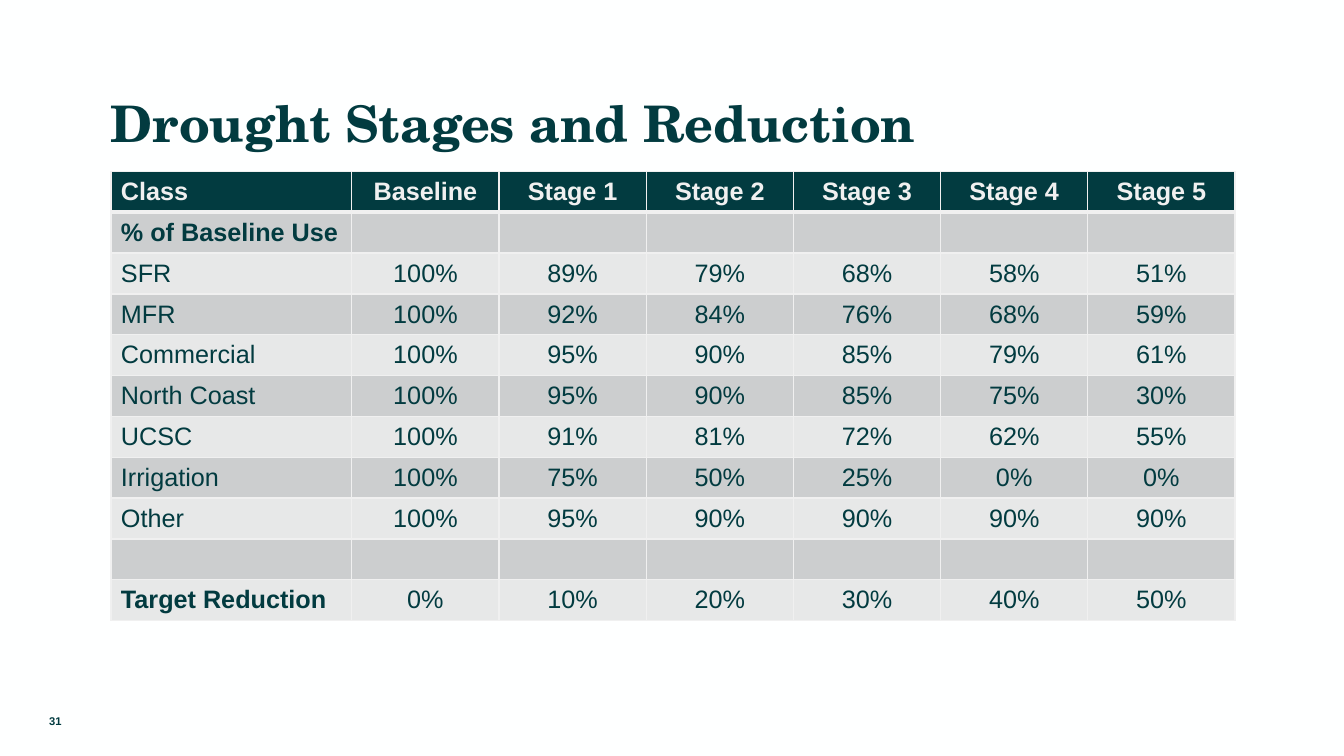
from lxml import etree
from pptx import Presentation
from pptx.dml.color import RGBColor
from pptx.enum.text import MSO_ANCHOR, MSO_AUTO_SIZE, PP_ALIGN
from pptx.oxml.ns import qn
from pptx.util import Inches, Pt

LEFT, CENTER = PP_ALIGN.LEFT, PP_ALIGN.CENTER
MIDDLE, BOTTOM = MSO_ANCHOR.MIDDLE, MSO_ANCHOR.BOTTOM
NO_AUTO_SIZE = MSO_AUTO_SIZE.NONE

HEADER = ["Class", "Baseline", "Stage 1", "Stage 2", "Stage 3", "Stage 4", "Stage 5"]
USE_BY_CLASS = {
    "SFR": [100, 89, 79, 68, 58, 51],
    "MFR": [100, 92, 84, 76, 68, 59],
    "Commercial": [100, 95, 90, 85, 79, 61],
    "North Coast": [100, 95, 90, 85, 75, 30],
    "UCSC": [100, 91, 81, 72, 62, 55],
    "Irrigation": [100, 75, 50, 25, 0, 0],
    "Other": [100, 95, 90, 90, 90, 90],
}
TARGET_REDUCTION = [0, 10, 20, 30, 40, 50]
BLANKS = [""] * 6


def color(value):
    return RGBColor.from_string(value)


def percent_row(label, values):
    return [label] + [f"{value}%" for value in values]


class StageSlide:
    dark, light = "023B40", "F0F0F0"
    bands = ["E7E8E8", "CCCECF"]
    title_font, body_font = "TeX Gyre Schola", "Arial"

    def __init__(self, presentation):
        self.slide = presentation.slides.add_slide(presentation.slide_layouts[5])
        fill = self.slide.background.fill
        fill.solid()
        fill.fore_color.rgb = color("FEFFFF")

    def set_text(self, frame, text, size, ink, bold, align, font_name):
        frame.text = text
        paragraph = frame.paragraphs[0]
        paragraph.alignment = align
        font = paragraph.font
        font.name, font.size, font.bold = font_name, Pt(size), bold
        font.color.rgb = color(ink)

    def title(self, text, left, top, width, height):
        shape = self.slide.shapes.title
        shape.left, shape.top = Inches(left), Inches(top)
        shape.width, shape.height = Inches(width), Inches(height)
        frame = shape.text_frame
        frame.auto_size = NO_AUTO_SIZE
        frame.vertical_anchor = BOTTOM
        frame.margin_left = frame.margin_right = frame.margin_bottom = 0
        frame.margin_top = Inches(0.21)
        self.set_text(frame, text, 36, self.dark, True, LEFT, self.title_font)

    def label(self, text, left, top, width, height):
        shape = self.slide.shapes.add_textbox(
            Inches(left), Inches(top), Inches(width), Inches(height))
        frame = shape.text_frame
        frame.word_wrap = True
        frame.vertical_anchor = MIDDLE
        self.set_text(frame, text, 8, self.dark, True, CENTER, self.body_font)

    def border(self, cell, side, width):
        properties = cell._tc.get_or_add_tcPr()
        line = etree.SubElement(properties, qn(f"a:ln{side}"), w=str(Pt(width)))
        fill = etree.SubElement(line, qn("a:solidFill"))
        etree.SubElement(fill, qn("a:srgbClr"), val=self.light)

    def cell(self, cell, text, row, column, bold):
        is_header = row == 0
        for side in "LRTB":
            is_rule = (row, side) in [(0, "B"), (1, "T")]
            self.border(cell, side, 3 if is_rule else 1)
        cell.fill.solid()
        cell.fill.fore_color.rgb = color(self.dark if is_header else self.bands[row % 2])
        if not text:
            return
        cell.vertical_anchor = MIDDLE
        if row and column:
            cell.margin_left = cell.margin_right = cell.margin_top = cell.margin_bottom = 0
        self.set_text(cell.text_frame, text, 18, self.light if is_header else self.dark,
                      bold, CENTER if column else LEFT, self.body_font)

    def table(self, rows, bold_labels, left, top, column_widths, height):
        table = self.slide.shapes.add_table(
            len(rows), len(column_widths), Inches(left), Inches(top),
            Inches(sum(column_widths)), Inches(height)).table
        table.first_row = table.horz_banding = False
        for column, width in zip(table.columns, column_widths):
            column.width = Inches(width)
        for row, texts in enumerate(rows):
            for column, text in enumerate(texts):
                bold = row == 0 or text in bold_labels
                self.cell(table.cell(row, column), text, row, column, bold)


def main():
    presentation = Presentation()
    presentation.slide_width, presentation.slide_height = Inches(13.33), Inches(7.5)
    stages = StageSlide(presentation)
    stages.title("Drought Stages and Reduction", 1.1, 0.64, 11.13, 0.87)
    rows = [HEADER, ["% of Baseline Use"] + BLANKS]
    rows += [percent_row(label, values) for label, values in USE_BY_CLASS.items()]
    rows += [[""] + BLANKS, percent_row("Target Reduction", TARGET_REDUCTION)]
    stages.table(rows, ["% of Baseline Use", "Target Reduction"],
                 1.1, 1.7, [2.39] + [1.46] * 6, 4.46)
    stages.label("31", 0, 6.95, 1.1, 0.4)
    presentation.save("out.pptx")


if __name__ == "__main__":
    main()
